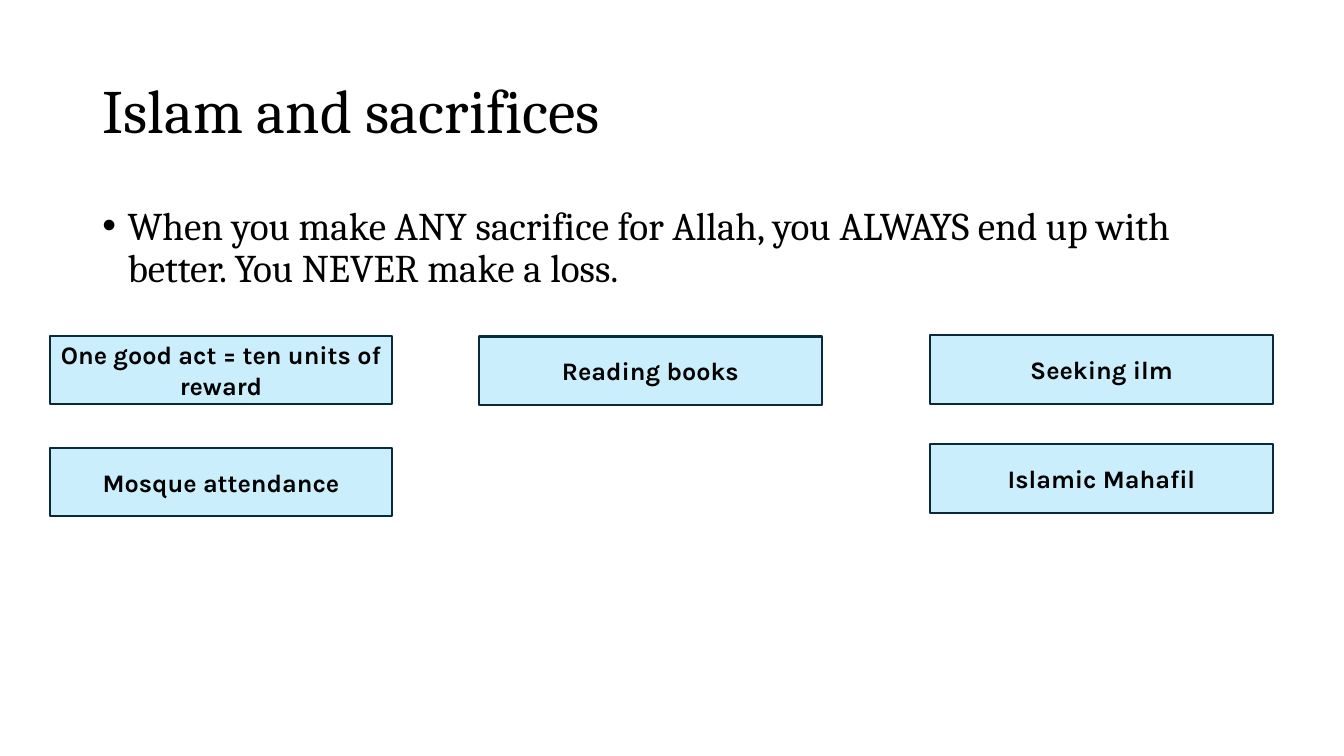
import pptx
import pptx.util
import pptx.dml.color
import pptx.enum.shapes
import pptx.enum.text
import lxml.etree
from dataclasses import dataclass

Cm = pptx.util.Cm
Pt = pptx.util.Pt
RGB = pptx.dml.color.RGBColor
ALIGN = pptx.enum.text.PP_ALIGN
ANCHOR = pptx.enum.text.MSO_ANCHOR


@dataclass(frozen=True)
class Theme:
    ink: RGB = RGB.from_string("000000")
    box_fill: RGB = RGB.from_string("CAEEFB")
    box_line: RGB = RGB.from_string("092A39")
    serif: str = "Cambria"
    sans: str = "Karla"
    title: int = 44
    body: int = 28
    label: int = 18


theme = Theme()


def write(sp, text, size, font, bold=False, align=ALIGN.LEFT, anchor=ANCHOR.MIDDLE, spacing=1.0):
    tf = sp.text_frame
    tf.word_wrap = True
    tf.vertical_anchor = anchor
    p = tf.paragraphs[0]
    p.alignment = align
    p.line_spacing = spacing
    r = p.add_run()
    r.text = text
    r.font.size = Pt(size)
    r.font.name = font
    r.font.bold = bold
    r.font.color.rgb = theme.ink
    return p


prs = pptx.Presentation()
prs.slide_width = Cm(33.87)
prs.slide_height = Cm(19.05)
s = prs.slides.add_slide(prs.slide_layouts[6])

title = s.shapes.add_textbox(Cm(2.33), Cm(1.02), Cm(29.21), Cm(3.68))
write(title, "Islam and sacrifices", theme.title, theme.serif, spacing=0.9)

body = s.shapes.add_textbox(Cm(2.33), Cm(5.08), Cm(29.21), Cm(3.68))
p = write(
    body,
    "When you make ANY sacrifice for Allah, you ALWAYS end up with better. You NEVER make a loss.",
    theme.body, theme.serif, anchor=ANCHOR.TOP, spacing=0.9,
)
p.space_before = Pt(10)
pPr = p._p.get_or_add_pPr()
pPr.set("marL", str(Cm(0.635)))
pPr.set("indent", str(-Cm(0.635)))
ns = pptx.oxml.ns.qn
lxml.etree.SubElement(pPr, ns("a:buFont")).set("typeface", "Arial")
lxml.etree.SubElement(pPr, ns("a:buChar")).set("char", "•")

left, middle, right = 1.25, 12.07, 23.44
examples = [
    (left, 8.46, "One good act = ten units of reward"),
    (middle, 8.48, "Reading books"),
    (left, 11.28, "Mosque attendance"),
    (right, 8.45, "Seeking ilm"),
    (right, 11.2, "Islamic Mahafil"),
]
for x, y, text in examples:
    sp = s.shapes.add_shape(
        pptx.enum.shapes.MSO_SHAPE.RECTANGLE, Cm(x), Cm(y), Cm(8.64), Cm(1.73)
    )
    sp.shadow.inherit = False
    sp.fill.solid()
    sp.fill.fore_color.rgb = theme.box_fill
    sp.line.color.rgb = theme.box_line
    sp.line.width = Pt(1.5)
    write(sp, text, theme.label, theme.sans, bold=True, align=ALIGN.CENTER)

prs.save("out.pptx")
